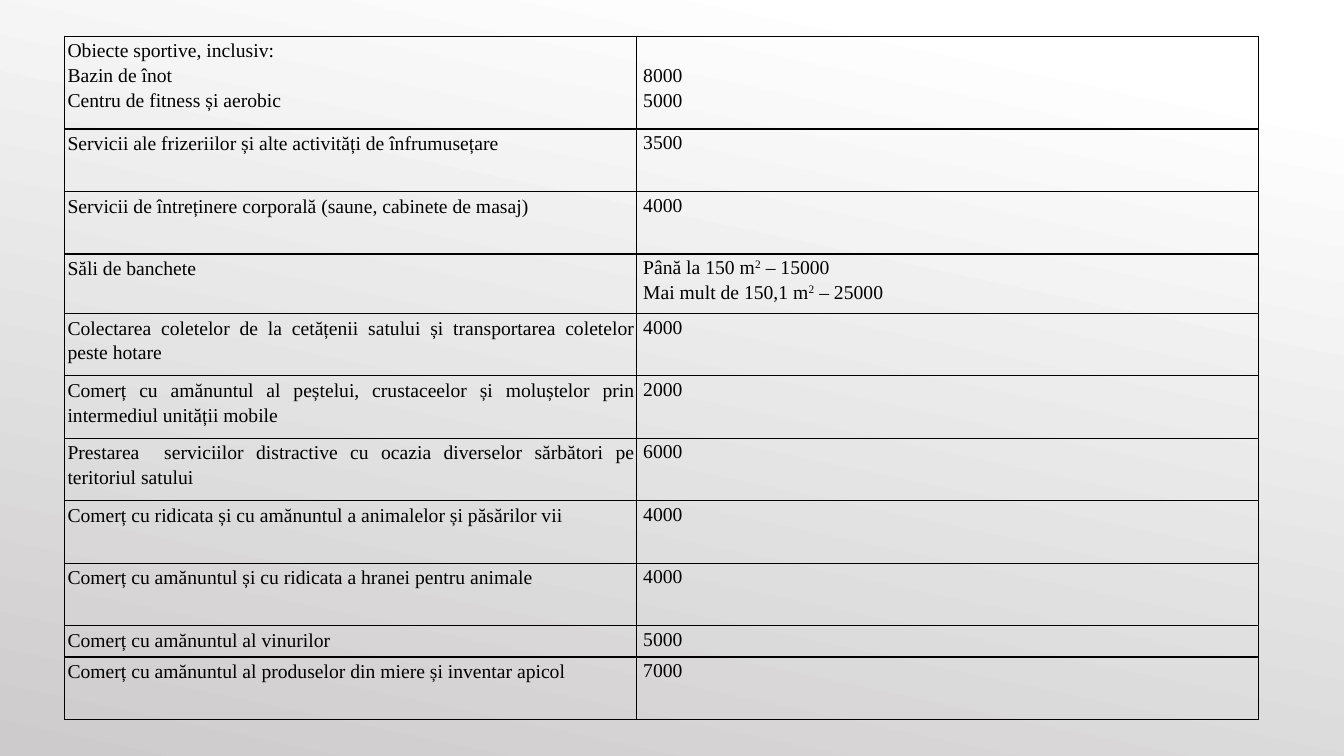
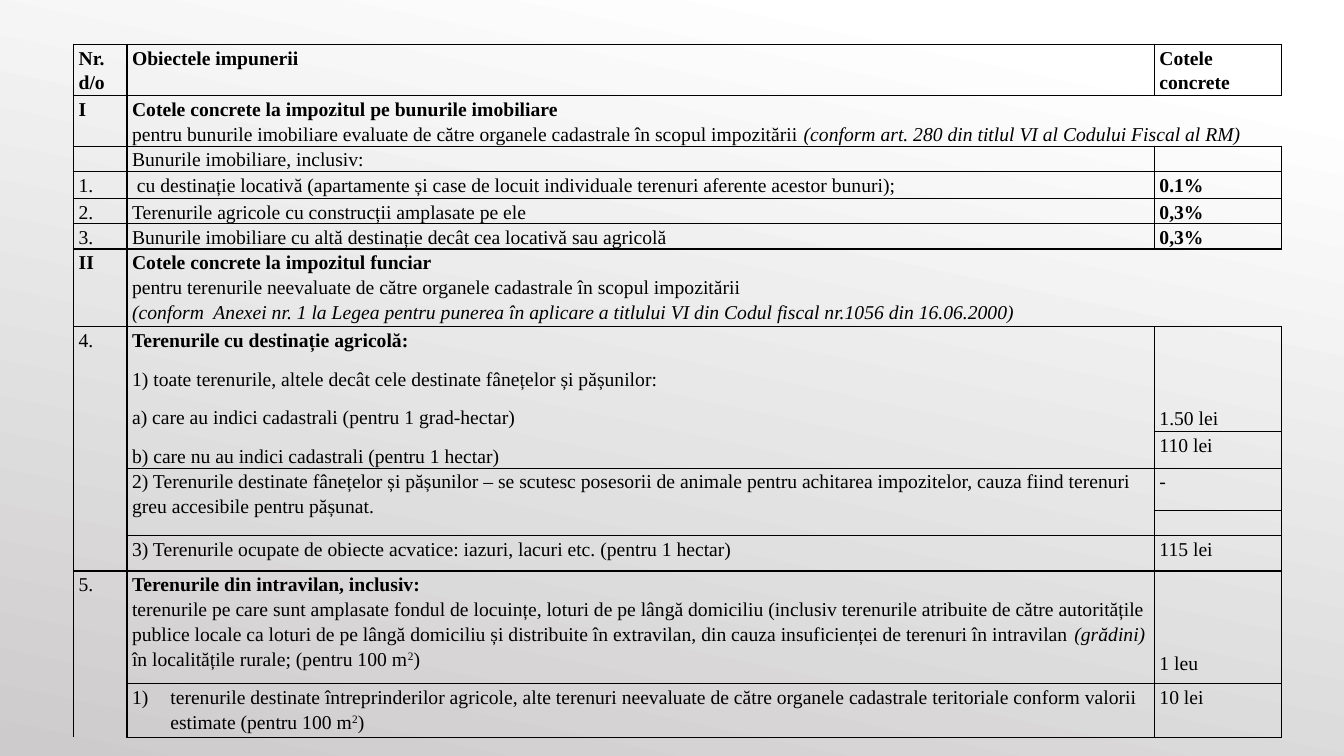
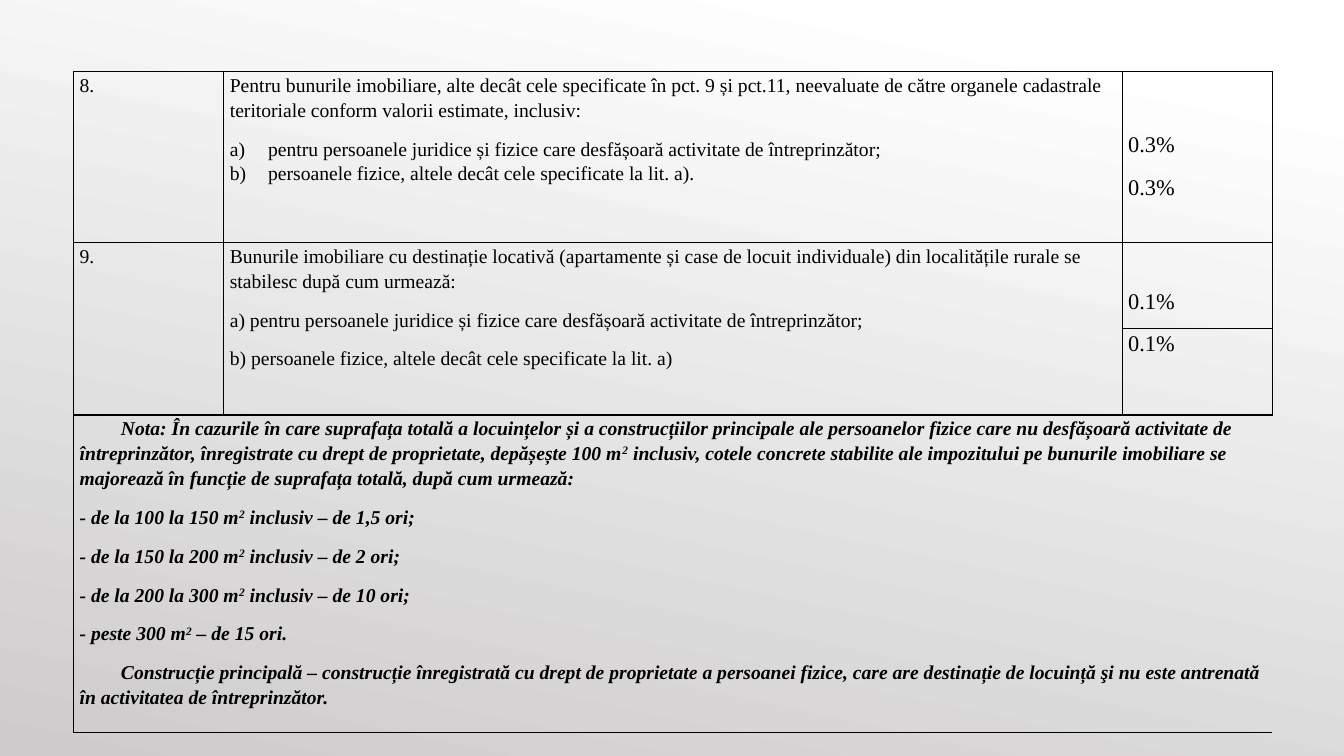
from dataclasses import dataclass, replace
from itertools import product

from lxml import etree
from pptx import Presentation
from pptx.dml.color import RGBColor
from pptx.enum.text import PP_ALIGN
from pptx.oxml.ns import qn
from pptx.slide import Slide
from pptx.table import _Cell
from pptx.text.text import _Paragraph
from pptx.util import Inches, Pt

LEFT = PP_ALIGN.LEFT
JUSTIFY = PP_ALIGN.JUSTIFY
BLANK_LAYOUT = 6
PLAIN_TABLE_STYLE = "{2D5ABB26-0587-4C30-8999-92F81FD0307C}"
SIDES = {"a:lnL": (0, -1), "a:lnR": (0, 1), "a:lnT": (-1, 0), "a:lnB": (1, 0)}


@dataclass(frozen=True)
class Theme:
    ink: str = "000000"
    light: str = "FFFFFF"
    shade: str = "CDCBCB"
    light_stop: float = 0.1
    angle: float = 258
    font: str = "Times New Roman"
    body: int = 14
    rate: int = 16
    line_spacing: float = 1.15
    gap: int = 10
    border: int = 1


THEME = Theme()


@dataclass(frozen=True)
class Span:
    text: str
    bold: bool = False
    italic: bool = False
    raised: bool = False


@dataclass(frozen=True)
class Line:
    spans: tuple[Span, ...]
    left: float = 0
    first: float = 0
    numbering: str = ""


@dataclass(frozen=True)
class Entry:
    lines: tuple[Line, ...]
    gap: int = 0
    drop: float = 0
    size: int = THEME.body


@dataclass(frozen=True)
class Insets:
    left: float
    top: float
    right: float
    bottom: float


@dataclass(frozen=True)
class Block:
    top: int
    left: int
    bottom: int
    right: int

    def holds(self, row: int, column: int) -> bool:
        return self.top <= row <= self.bottom and self.left <= column <= self.right


@dataclass(frozen=True)
class Grid:
    left: float
    top: float
    widths: tuple[float, ...]
    heights: tuple[float, ...]
    insets: tuple[Insets, ...]
    entries: dict[tuple[int, int], Entry]
    merged: tuple[Block, ...] = ()
    open: tuple[Block, ...] = ()
    align: PP_ALIGN = LEFT


def line(*spans: Span | str, **layout: float | str) -> Line:
    return Line(tuple(Span(s) if isinstance(s, str) else s for s in spans), **layout)


def entry(*lines: Line | Span | str, **layout: float) -> Entry:
    return Entry(tuple(l if isinstance(l, Line) else line(l) for l in lines), **layout)


def by_position(rows: list[tuple[Entry | str, ...]]) -> dict[tuple[int, int], Entry]:
    return {
        (r, c): item if isinstance(item, Entry) else entry(item)
        for r, row in enumerate(rows)
        for c, item in enumerate(row)
        if item
    }


def bold(text: str) -> Span:
    return Span(text, bold=True)


def italic(text: str) -> Span:
    return Span(text, italic=True)


def strong(text: str) -> Span:
    return Span(text, bold=True, italic=True)


def numbered(text: str, numbering: str) -> Line:
    return line(text, left=0.38, first=-0.38, numbering=numbering)


def split_raised(span: Span) -> list[Span]:
    pieces = span.text.split("²")
    spans = [replace(span, text=pieces[0])]
    for piece in pieces[1:]:
        spans += [replace(span, text="2", raised=True), replace(span, text=piece)]
    return [s for s in spans if s.text]


def add_span(para: _Paragraph, span: Span, size: int) -> None:
    run = para.add_run()
    run.text = span.text
    formats = {"name": THEME.font, "size": Pt(size), "bold": span.bold, "italic": span.italic}
    for name, value in formats.items():
        setattr(run.font, name, value)
    run.font.color.rgb = RGBColor.from_string(THEME.ink)
    if span.raised:
        run.font._element.set("baseline", "30000")


def write_entry(cell: _Cell, item: Entry, align: PP_ALIGN) -> None:
    frame = cell.text_frame
    for index, source in enumerate(item.lines):
        para = frame.add_paragraph() if index else frame.paragraphs[0]
        formats = {
            "alignment": align,
            "line_spacing": THEME.line_spacing,
            "space_after": Pt(0 if source.numbering else item.gap),
        }
        for name, value in formats.items():
            setattr(para, name, value)
        properties = para._p.get_or_add_pPr()
        properties.set("marL", str(Inches(source.left)))
        properties.set("indent", str(Inches(source.first)))
        if source.numbering:
            etree.SubElement(properties, qn("a:buAutoNum"), type=source.numbering)
        for span in source.spans:
            for part in split_raised(span):
                add_span(para, part, item.size)


def draw_border(cell: _Cell, side: str) -> None:
    edge = etree.SubElement(cell._tc.get_or_add_tcPr(), qn(side), w=str(Pt(THEME.border)))
    fill = etree.SubElement(edge, qn("a:solidFill"))
    etree.SubElement(fill, qn("a:srgbClr"), val=THEME.ink)


def draw_grid(page: Slide, grid: Grid) -> None:
    row_count, column_count = len(grid.heights), len(grid.widths)
    frame = page.shapes.add_table(
        row_count, column_count, Inches(grid.left), Inches(grid.top),
        Inches(sum(grid.widths)), Inches(sum(grid.heights)),
    )
    table = frame.table
    table.first_row = table.horz_banding = False
    table._tbl.tblPr.find(qn("a:tableStyleId")).text = PLAIN_TABLE_STYLE
    for column, width in zip(table.columns, grid.widths):
        column.width = Inches(width)
    for row, height in zip(table.rows, grid.heights):
        row.height = Inches(height)
    for block in grid.merged:
        table.cell(block.top, block.left).merge(table.cell(block.bottom, block.right))

    for r, c in product(range(row_count), range(column_count)):
        cell = table.cell(r, c)
        item = grid.entries.get((r, c))
        insets = grid.insets[c]
        margins = {
            "margin_left": insets.left,
            "margin_top": insets.top + (item.drop if item else 0),
            "margin_right": insets.right,
            "margin_bottom": insets.bottom,
        }
        for name, value in margins.items():
            setattr(cell, name, Inches(value))
        home = [b for b in grid.merged + grid.open if b.holds(r, c)]
        for side, (down, across) in SIDES.items():
            if not any(b.holds(r + down, c + across) for b in home):
                draw_border(cell, side)
        cell.fill.background()
        if item:
            write_entry(cell, item, grid.align)
        else:
            para = cell.text_frame.paragraphs[0]
            etree.SubElement(para._p, qn("a:endParaRPr"), sz=str(THEME.body * 100))


def paint_background(page: Slide) -> None:
    fill = page.background.fill
    fill.gradient()
    fill.gradient_angle = THEME.angle
    stops = ((THEME.light_stop, THEME.light), (1, THEME.shade))
    for stop, (position, colour) in zip(fill.gradient_stops, stops):
        stop.position = position
        stop.color.rgb = RGBColor.from_string(colour)


SERVICES = Grid(
    0.64, 0.36, (5.67, 6.17),
    (0.92, 0.62, 0.62, 0.59, 0.62, 0.62, 0.62, 0.62, 0.62, 0.31, 0.62),
    (Insets(0.03, 0.01, 0.01, 0.01), Insets(0.07, 0, 0.07, 0)),
    by_position([
        (entry("Obiecte sportive, inclusiv:", "Bazin de înot", "Centru de fitness și aerobic"),
         entry("8000", "5000", drop=0.25)),
        ("Servicii ale frizeriilor și alte activități de înfrumusețare", "3500"),
        ("Servicii de întreținere corporală (saune, cabinete de masaj)", "4000"),
        ("Săli de banchete", entry("Până la 150 m² – 15000", "Mai mult de 150,1 m² – 25000")),
        ("Colectarea coletelor de la cetățenii satului și transportarea coletelor peste hotare",
         "4000"),
        ("Comerț cu amănuntul al peștelui, crustaceelor și moluștelor prin intermediul "
         "unității mobile", "2000"),
        ("Prestarea  serviciilor distractive cu ocazia diverselor sărbători pe teritoriul satului",
         "6000"),
        ("Comerț cu ridicata și cu amănuntul a animalelor și păsărilor vii", "4000"),
        ("Comerț cu amănuntul și cu ridicata a hranei pentru animale", "4000"),
        ("Comerț cu amănuntul al vinurilor", "5000"),
        ("Comerț cu amănuntul al produselor din miere și inventar apicol", "7000"),
    ]),
    align=JUSTIFY,
)

TAX_RATES = Grid(
    0.73, 0.44, (0.53, 10.19, 1.26),
    (0.51, 0.5, 0.25, 0.27, 0.25, 0.25, 0.77, 1.04, 0.08, 0.42, 0.25, 0.35, 1.12, 0.53),
    (Insets(0.05, 0, 0.05, 0),) * 3,
    by_position([
        (entry(bold("Nr. d/o")), entry(bold("Obiectele impunerii")),
         entry(bold("Cotele concrete"))),
        (entry(bold("I")), entry(
            bold("Cotele concrete la impozitul pe bunurile imobiliare"),
            line("pentru bunurile imobiliare evaluate de către organele cadastrale în scopul "
                 "impozitării ",
                 italic("(conform art. 280 din titlul VI al Codului Fiscal al RM)")))),
        ("", "Bunurile imobiliare, inclusiv:"),
        ("1.", " cu destinație locativă (apartamente și case de locuit individuale terenuri "
         "aferente acestor bunuri);", entry(bold("0.1%"))),
        ("2.", "Terenurile agricole cu construcții amplasate pe ele", entry(bold("0,3%"))),
        ("3.", "Bunurile imobiliare cu altă destinație decât cea locativă sau agricolă",
         entry(bold("0,3%"))),
        (entry(bold("II")), entry(
            bold("Cotele concrete la impozitul funciar"),
            "pentru terenurile neevaluate de către organele cadastrale în scopul impozitării",
            italic("(conform  Anexei nr. 1 la Legea pentru punerea în aplicare a titlului VI din "
                   "Codul fiscal nr.1056 din 16.06.2000)"))),
        ("4.", entry(
            bold("Terenurile cu destinație agricolă:"),
            "1) toate terenurile, altele decât cele destinate fânețelor și pășunilor:",
            "a) care au indici cadastrali (pentru 1 grad-hectar)",
            "b) care nu au indici cadastrali (pentru 1 hectar)",
            gap=THEME.gap), entry("1.50 lei", drop=0.78)),
        ("", "", "110 lei"),
        ("", "2) Terenurile destinate fânețelor și pășunilor – se scutesc posesorii de animale "
         "pentru achitarea impozitelor, cauza fiind terenuri greu accesibile pentru pășunat.",
         "-"),
        (),
        ("", "3) Terenurile ocupate de obiecte acvatice: iazuri, lacuri etc. (pentru 1 hectar)",
         "115 lei"),
        ("5.", entry(
            bold("Terenurile din intravilan, inclusiv:"),
            line("terenurile pe care sunt amplasate fondul de locuințe, loturi de pe lângă "
                 "domiciliu (inclusiv terenurile atribuite de către autoritățile publice locale "
                 "ca loturi de pe lângă domiciliu și distribuite în extravilan, din cauza "
                 "insuficienței de terenuri în intravilan ", italic("(grădini)")),
            "în localitățile rurale; (pentru 100 m²)"), entry("1 leu", drop=0.78)),
        ("", entry(numbered(
            "terenurile destinate întreprinderilor agricole, alte terenuri neevaluate de către "
            "organele cadastrale teritoriale conform valorii estimate (pentru 100 m²)",
            "arabicParenR")), "10 lei"),
    ]),
    merged=(Block(1, 1, 1, 2), Block(6, 1, 6, 2), Block(7, 0, 11, 0), Block(7, 1, 8, 1),
            Block(9, 1, 10, 1), Block(12, 0, 13, 0)),
    open=(Block(7, 2, 8, 2), Block(9, 2, 10, 2)),
)

PROPERTY_RATES = Grid(
    0.73, 0.71, (1.49, 8.91, 1.49), (0.57, 0.97, 0.85, 0.86, 3.15),
    (Insets(0.06, 0, 0.06, 0),) * 3,
    by_position([
        ("8.", entry(
            "Pentru bunurile imobiliare, alte decât cele specificate în pct. 9 și pct.11, "
            "neevaluate de către organele cadastrale teritoriale conform valorii estimate, "
            "inclusiv:",
            numbered("pentru persoanele juridice și fizice care desfășoară activitate de "
                     "întreprinzător;", "alphaLcParenR"),
            numbered("persoanele fizice, altele decât cele specificate la lit. a).",
                     "alphaLcParenR"),
            gap=THEME.gap)),
        ("", "", entry("0.3%", "0.3%", gap=THEME.gap, size=THEME.rate)),
        ("9.", entry(
            "Bunurile imobiliare cu destinație locativă (apartamente și case de locuit "
            "individuale) din localitățile rurale se stabilesc după cum urmează:",
            "a) pentru persoanele juridice și fizice care desfășoară activitate de "
            "întreprinzător;",
            "b) persoanele fizice, altele decât cele specificate la lit. a)",
            gap=THEME.gap), entry("0.1%", drop=0.43, size=THEME.rate)),
        ("", "", entry("0.1%", size=THEME.rate)),
        (entry(
            line(strong(
                "Nota: În cazurile în care suprafața totală a locuințelor și a construcțiilor "
                "principale ale persoanelor fizice care nu desfășoară activitate de "
                "întreprinzător, înregistrate cu drept de proprietate, depășește 100 m² "
                "inclusiv, cotele concrete stabilite ale impozitului pe bunurile imobiliare se "
                "majorează în funcție de suprafața totală, după cum urmează:"), first=0.41),
            strong("- de la 100 la 150 m² inclusiv – de 1,5 ori;"),
            strong("- de la 150 la 200 m² inclusiv – de 2 ori;"),
            strong("- de la 200 la 300 m² inclusiv – de 10 ori;"),
            strong("- peste 300 m² – de 15 ori."),
            line(strong(
                "Construcție principală – construcție înregistrată cu drept de proprietate a "
                "persoanei fizice, care are destinație de locuință şi nu este antrenată în "
                "activitatea de întreprinzător."), first=0.41),
            gap=THEME.gap),),
    ]),
    merged=(Block(0, 0, 1, 0), Block(0, 1, 1, 1), Block(2, 0, 3, 0), Block(2, 1, 3, 1),
            Block(4, 0, 4, 2)),
    open=(Block(0, 2, 1, 2), Block(2, 2, 3, 2)),
)


def main() -> None:
    deck = Presentation()
    deck.slide_width, deck.slide_height = Inches(13.33), Inches(7.5)
    for grid in (SERVICES, TAX_RATES, PROPERTY_RATES):
        page = deck.slides.add_slide(deck.slide_layouts[BLANK_LAYOUT])
        paint_background(page)
        draw_grid(page, grid)
    deck.save("out.pptx")


if __name__ == "__main__":
    main()
